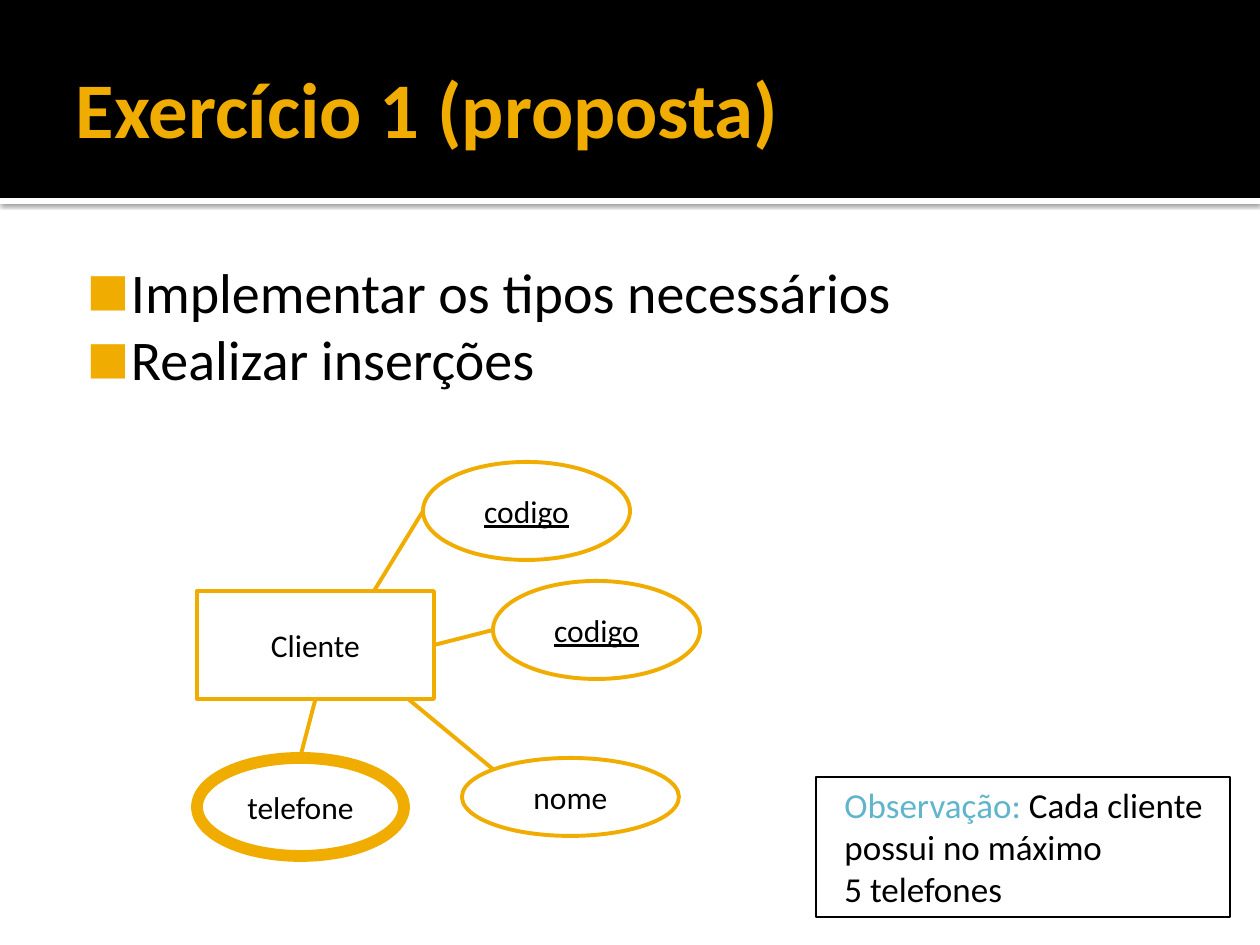
from dataclasses import dataclass
from typing import NamedTuple, Optional

from lxml import etree
from pptx import Presentation
from pptx.dml.color import RGBColor
from pptx.enum.shapes import MSO_CONNECTOR as Link, MSO_SHAPE as Preset
from pptx.enum.text import MSO_ANCHOR as Anchor, MSO_AUTO_SIZE as AutoSize, PP_ALIGN as Align
from pptx.oxml.ns import qn
from pptx.util import Emu, Pt

EMU_PER_PX = 914400 / 126
FONT = "Calibri"
COLORS = {"gold": "F0AD00", "black": "000000", "white": "FFFFFF", "blue": "60B5CC"}
RIGHT, BOTTOM = 3, 2
HANGING = (60, -44)


class Box(NamedTuple):
    left: int
    top: int
    width: int
    height: int


class Piece(NamedTuple):
    text: str
    size: int
    color: str = "black"
    bold: bool = False
    underline: bool = False


@dataclass(frozen=True)
class Attribute:
    label: str
    box: Box
    is_key: bool = False
    line_width: float = 2.25


@dataclass(frozen=True)
class Edge:
    start: tuple[int, int]
    end: tuple[int, int]
    entity_side: Optional[int] = None


def px(value: int) -> Emu:
    return Emu(round(value * EMU_PER_PX))


def rgb(name: str) -> RGBColor:
    return RGBColor.from_string(COLORS[name])


def add_box(shapes, preset, box: Box, fill: Optional[str] = None,
            line: Optional[str] = None, line_width: float = 2.25):
    shape = shapes.add_shape(preset, *map(px, box))
    shape.shadow.inherit = False
    if fill:
        shape.fill.solid()
        shape.fill.fore_color.rgb = rgb(fill)
    else:
        shape.fill.background()
    if line:
        shape.line.color.rgb = rgb(line)
        shape.line.width = Pt(line_width)
    else:
        shape.line.fill.background()
    return shape


def write(frame, paragraphs: list[list[Piece]], align=Align.LEFT,
          anchor=Anchor.TOP, hanging: bool = False, bulleted: bool = False) -> None:
    frame.word_wrap = True
    frame.vertical_anchor = anchor
    for index, pieces in enumerate(paragraphs):
        paragraph = frame.add_paragraph() if index else frame.paragraphs[0]
        paragraph.alignment = align
        for piece in pieces:
            run = paragraph.add_run()
            run.text = piece.text
            run.font.name = FONT
            run.font.size = Pt(piece.size)
            run.font.bold = piece.bold
            run.font.underline = piece.underline
            run.font.color.rgb = rgb(piece.color)
        properties = paragraph._p.get_or_add_pPr()
        if hanging:
            margin, indent = HANGING
            properties.set("marL", str(px(margin)))
            properties.set("indent", str(px(indent)))
        if bulleted:
            color = etree.SubElement(properties, qn("a:buClr"))
            etree.SubElement(color, qn("a:srgbClr"), val=COLORS["gold"])
            etree.SubElement(properties, qn("a:buSzPct"), val="80000")
            etree.SubElement(properties, qn("a:buFont"), typeface=FONT)
            etree.SubElement(properties, qn("a:buChar"), char="■")


def add_text(shapes, box: Box, insets: tuple[int, int, int, int],
             paragraphs: list[list[Piece]], **style) -> None:
    frame = shapes.add_textbox(*map(px, box)).text_frame
    (frame.margin_left, frame.margin_top,
     frame.margin_right, frame.margin_bottom) = map(px, insets)
    write(frame, paragraphs, **style)


def add_drop_shadow(shape) -> None:
    effects = shape._element.spPr.find(qn("a:effectLst"))
    shadow = etree.SubElement(effects, qn("a:outerShdw"), blurRad=str(Pt(2.5)),
                              dist=str(Pt(0.8)), dir="5400000",
                              algn="tl", rotWithShape="0")
    color = etree.SubElement(shadow, qn("a:srgbClr"), val=COLORS["black"])
    etree.SubElement(color, qn("a:alpha"), val="60000")


def add_edge(shapes, edge: Edge, entity=None) -> None:
    line = shapes.add_connector(Link.STRAIGHT, *map(px, edge.start + edge.end))
    line.line.color.rgb = rgb("gold")
    line.line.width = Pt(2.25)
    etree.SubElement(line._element.spPr, qn("a:effectLst"))
    if entity is not None:
        line.begin_connect(entity, edge.entity_side)


ENTITY_BOX = Box(197, 591, 237, 108)
ATTRIBUTES = [
    Attribute("nome", Box(462, 758, 217, 78)),
    Attribute("codigo", Box(493, 581, 207, 98), is_key=True),
    Attribute("telefone", Box(197, 758, 207, 98), line_width=6.75),
    Attribute("codigo", Box(423, 462, 207, 98), is_key=True),
]
HIDDEN_START_EDGES = [
    Edge((384, 679), (494, 770)),
    Edge((374, 591), (423, 511)),
]
JOINED_EDGES = [
    Edge((434, 645), (493, 630), RIGHT),
    Edge((315, 699), (300, 758), BOTTOM),
]


def main() -> None:
    deck = Presentation()
    deck.slide_width, deck.slide_height = px(1260), px(945)
    shapes = deck.slides.add_slide(deck.slide_layouts[6]).shapes

    strip = add_box(shapes, Preset.RECTANGLE, Box(0, 198, 1260, 6), "white")
    add_drop_shadow(strip)
    add_box(shapes, Preset.RECTANGLE, Box(0, 0, 1260, 198), "black")
    add_text(shapes, Box(63, 21, 1134, 173), (13, 6, 6, 6),
             [[Piece("Exercício 1 (proposta)", 45, "gold", bold=True)]],
             anchor=Anchor.MIDDLE)
    tasks = ["Implementar os tipos necessários", "Realizar inserções"]
    add_text(shapes, Box(63, 244, 1134, 638), (8, 13, 13, 6),
             [[Piece(task, 32)] for task in tasks], hanging=True, bulleted=True)

    for edge in HIDDEN_START_EDGES:
        add_edge(shapes, edge)
    for attribute in ATTRIBUTES:
        oval = add_box(shapes, Preset.OVAL, attribute.box, "white", "gold",
                       attribute.line_width)
        write(oval.text_frame,
              [[Piece(attribute.label, 18, underline=attribute.is_key)]],
              Align.CENTER, Anchor.MIDDLE)
    entity = add_box(shapes, Preset.RECTANGLE, ENTITY_BOX, "white", "gold")
    write(entity.text_frame, [[Piece("Cliente", 18)]], Align.CENTER, Anchor.MIDDLE)
    for edge in JOINED_EDGES:
        add_edge(shapes, edge, entity)

    remark = add_box(shapes, Preset.RECTANGLE, Box(816, 777, 414, 140),
                     line="black", line_width=0.75)
    write(remark.text_frame,
          [[Piece("Observação: ", 20, "blue"), Piece("Cada cliente", 20)],
           [Piece("possui no máximo", 20)],
           [Piece("5 telefones", 20)]], hanging=True)
    remark.text_frame.auto_size = AutoSize.SHAPE_TO_FIT_TEXT

    deck.save("out.pptx")


if __name__ == "__main__":
    main()
